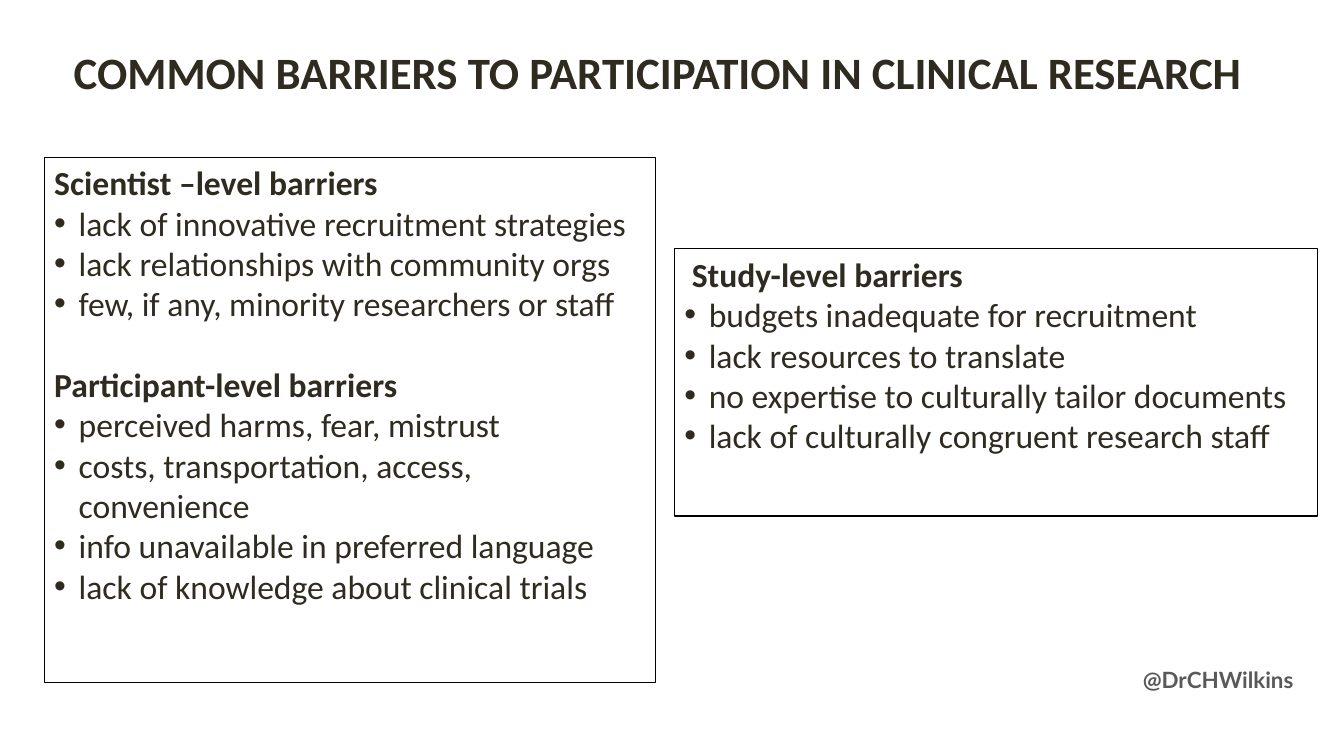
import pptx
import pptx.util
import pptx.dml.color
import pptx.enum.shapes
import pptx.enum.text
from lxml import etree

Pt = pptx.util.Pt
Align = pptx.enum.text.PP_ALIGN
Anchor = pptx.enum.text.MSO_ANCHOR

TITLE = "COMMON BARRIERS TO PARTICIPATION IN CLINICAL RESEARCH"
HANDLE = "@DrCHWilkins"
INK, GREY, BLACK, WHITE = "2F2B20", "595959", "000000", "FFFFFF"
HANG, GAP = 17.5, 28.8

PANELS = [
    {"at": (31.7, 112.3, 436.3, 375.1), "inset": 0, "groups": [
        ("Scientist –level barriers", [
            "lack of innovative recruitment strategies",
            "lack relationships with community orgs",
            "few, if any, minority researchers or staff"]),
        ("Participant-level barriers", [
            "perceived harms, fear, mistrust",
            "costs, transportation, access, convenience",
            "info unavailable in preferred language",
            "lack of knowledge about clinical trials"])]},
    {"at": (481.7, 177.8, 459.4, 190.8), "inset": 5.4, "groups": [
        ("Study-level barriers", [
            "budgets inadequate for recruitment",
            "lack resources to translate",
            "no expertise to culturally tailor documents",
            "lack of culturally congruent research staff"])]},
]


def color(code):
    return pptx.dml.color.RGBColor.from_string(code)


def style(para, size, bold, face="Calibri", code=INK):
    for run in para.runs:
        run.font.size = Pt(size)
        run.font.bold = bold
        run.font.name = face
        run.font.color.rgb = color(code)


def indent(para, left, hang=0, mark=None):
    props = para._p.get_or_add_pPr()
    props.set("marL", str(int(Pt(left))))
    props.set("indent", str(int(Pt(-hang))))
    if mark:
        tag = pptx.oxml.ns.qn
        etree.SubElement(props, tag("a:buFont")).set("typeface", "Arial")
        etree.SubElement(props, tag("a:buChar")).set("char", mark)


def add_panel(slide, panel):
    box = slide.shapes.add_shape(
        pptx.enum.shapes.MSO_SHAPE.RECTANGLE, *map(Pt, panel["at"]))
    box.shadow.inherit = False
    box.fill.solid()
    box.fill.fore_color.rgb = color(WHITE)
    box.line.color.rgb = color(BLACK)
    box.line.width = Pt(0.75)
    frame = box.text_frame
    frame.word_wrap = True
    frame.vertical_anchor = Anchor.TOP
    first = True
    for head, items in panel["groups"]:
        for i, text in enumerate([head] + items):
            para = frame.paragraphs[0] if first else frame.add_paragraph()
            para.text = text
            if i:
                indent(para, HANG, HANG, "•")
            else:
                indent(para, panel["inset"])
                if not first:
                    para.space_before = Pt(GAP)
            para.alignment = Align.LEFT
            style(para, 24, i == 0)
            first = False


def main():
    deck = pptx.Presentation()
    deck.slide_width, deck.slide_height = Pt(960), Pt(540)
    slide = deck.slides.add_slide(deck.slide_layouts[5])

    title = slide.shapes.title
    title.left, title.top, title.width, title.height = map(
        Pt, (45.4, 28.1, 870.5, 46.1))
    frame = title.text_frame
    frame.text = TITLE
    frame.word_wrap = True
    frame.vertical_anchor = Anchor.TOP
    frame.paragraphs[0].alignment = Align.LEFT
    style(frame.paragraphs[0], 32, True)

    for panel in PANELS:
        add_panel(slide, panel)

    note = slide.shapes.add_textbox(*map(Pt, (149, 472.3, 782, 26.6)))
    frame = note.text_frame
    frame.text = HANDLE
    frame.word_wrap = True
    frame.paragraphs[0].alignment = Align.RIGHT
    style(frame.paragraphs[0], 16, True, "Lato", GREY)

    deck.save("out.pptx")


if __name__ == "__main__":
    main()
